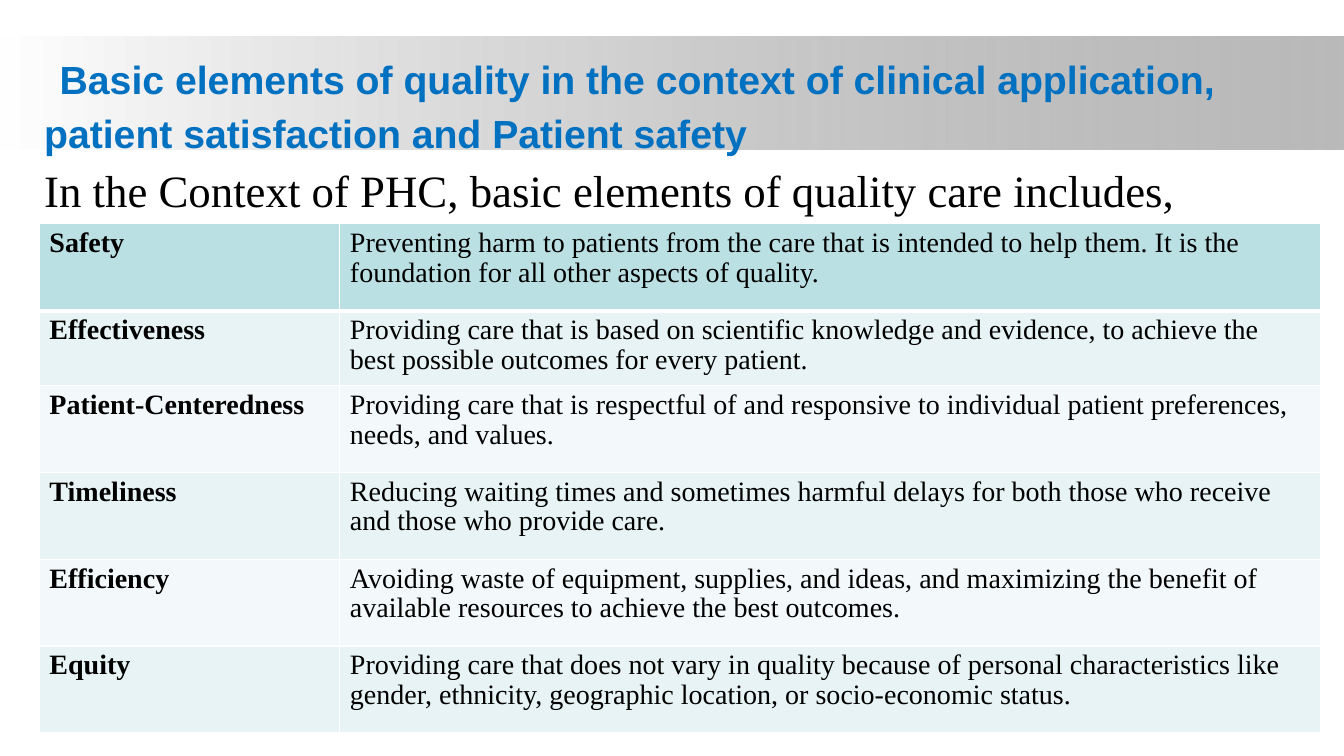
from lxml.etree import SubElement
from pptx import Presentation
from pptx.dml.color import RGBColor
from pptx.enum.shapes import MSO_SHAPE
from pptx.oxml.ns import qn
from pptx.util import Inches, Pt

COLORS = {
    "white": "FFFFFF", "gray": "808080", "black": "000000", "title": "0070C0",
    "head": "BBE0E3", "odd": "E7F3F4", "even": "F3F9FA",
}
ELEMENTS = [
    ("Safety", "Preventing harm to patients from the care that is intended to help them. "
               "It is the foundation for all other aspects of quality."),
    ("Effectiveness", "Providing care that is based on scientific knowledge and evidence, "
                      "to achieve the best possible outcomes for every patient."),
    ("Patient-Centeredness", "Providing care that is respectful of and responsive to "
                             "individual patient preferences, needs, and values."),
    ("Timeliness", "Reducing waiting times and sometimes harmful delays for both those "
                   "who receive and those who provide care."),
    ("Efficiency", "Avoiding waste of equipment, supplies, and ideas, and maximizing the "
                   "benefit of available resources to achieve the best outcomes."),
    ("Equity", "Providing care that does not vary in quality because of personal "
               "characteristics like gender, ethnicity, geographic location, or "
               "socio-economic status."),
]


class QualitySlide:
    """Draws styled elements on one slide, with lengths in percent of its size."""

    def __init__(self, deck):
        self.deck = deck
        self.slide = deck.slides.add_slide(deck.slide_layouts[6])

    def x(self, share):
        return round(self.deck.slide_width * share / 100)

    def y(self, share):
        return round(self.deck.slide_height * share / 100)

    def area(self, left, top, width, height):
        return self.x(left), self.y(top), self.x(width), self.y(height)

    def style(self, font, face, size, color, bold=False):
        font.name, font.size, font.bold = face, Pt(size), bold
        font.color.rgb = RGBColor.from_string(COLORS[color])

    def band(self, *area):
        band = self.slide.shapes.add_shape(MSO_SHAPE.RECTANGLE, *self.area(*area))
        band.shadow.inherit = False
        band.line.fill.background()
        band.fill.gradient()
        band.fill.gradient_angle = 0
        for stop, color in zip(band.fill.gradient_stops, ("white", "gray")):
            stop.color.rgb = RGBColor.from_string(COLORS[color])
        gray = list(band._element.spPr.iter(qn("a:srgbClr")))[-1]
        SubElement(gray, qn("a:alpha"), val="54000")

    def paragraph(self, *area):
        frame = self.slide.shapes.add_textbox(*self.area(*area)).text_frame
        frame.word_wrap = True
        return frame.paragraphs[0]

    def title(self, text, *area):
        title = self.paragraph(*area)
        title.line_spacing = 1.08
        lead, words = title.add_run(), title.add_run()
        lead.text, words.text = " ", text
        self.style(lead.font, "Arial", 40, "black")
        self.style(words.font, "Arial", 28, "title", True)

    def intro(self, text, *area):
        intro = self.paragraph(*area)
        intro.text = text
        self.style(intro.font, "Times New Roman", 32, "black")

    def border(self, cell, side, width):
        line = SubElement(cell._tc.get_or_add_tcPr(), qn(f"a:ln{side}"), w=str(Pt(width)))
        fill = SubElement(line, qn("a:solidFill"))
        SubElement(fill, qn("a:srgbClr"), val=COLORS["white"])

    def cell(self, cell, text, row, bold):
        for side in "LRTB":
            under_head = (row, side) in ((0, "B"), (1, "T"))
            self.border(cell, side, 3 if under_head else 1)
        cell.fill.solid()
        shade = "head" if row == 0 else "odd" if row % 2 else "even"
        cell.fill.fore_color.rgb = RGBColor.from_string(COLORS[shade])
        cell.text = text
        words = cell.text_frame.paragraphs[0]
        words.line_spacing = 0.96
        self.style(words.font, "Times New Roman", 20, "black", bold)

    def table(self, entries, widths, heights, left, top):
        area = self.area(left, top, sum(widths), sum(heights))
        table = self.slide.shapes.add_table(len(entries), len(widths), *area).table
        for column, width in zip(table.columns, widths):
            column.width = self.x(width)
        for row, (entry, height) in enumerate(zip(entries, heights)):
            table.rows[row].height = self.y(height)
            for column, text in enumerate(entry):
                self.cell(table.cell(row, column), text, row, column == 0)


def main():
    deck = Presentation()
    deck.slide_width, deck.slide_height = Inches(13.33), Inches(7.5)
    page = QualitySlide(deck)
    page.band(0, 4.8, 100, 14.93)
    page.title("Basic elements of quality in the context of clinical application, "
               "patient satisfaction and Patient safety", 2.55, 3.73, 94.82, 16)
    page.intro("In the Context of PHC, basic elements of quality care includes,",
               2.55, 20.93, 95.42, 8.5)
    page.table(ELEMENTS, (22.36, 72.99), (11.5, 8.4) + (11.5,) * 4, 2.93, 29.6)
    deck.save("out.pptx")


if __name__ == "__main__":
    main()
